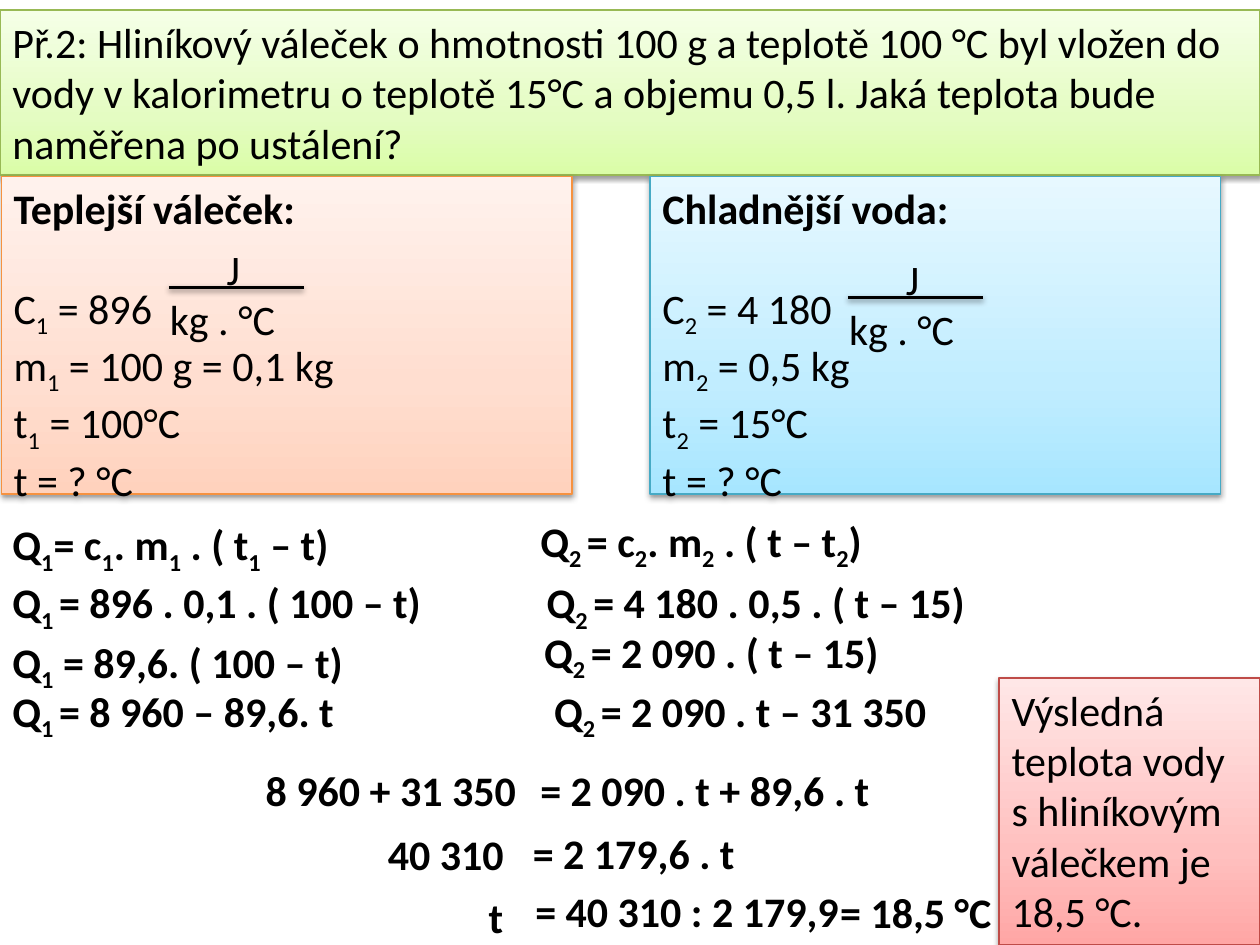
"""Build a worked calorimetry example: an aluminium cylinder placed in cooler water."""
from copy import deepcopy
from dataclasses import dataclass

from lxml import etree
from pptx import Presentation
from pptx import util as u
from pptx.dml.color import RGBColor
from pptx.enum import shapes, text
from pptx.oxml.ns import qn

EMU_PER_PX = 9144


@dataclass(frozen=True)
class Palette:
    stops: tuple[str, str, str]
    line: str


@dataclass(frozen=True)
class Theme:
    font: str = "Calibri"
    size: int = 24
    ink: str = "000000"
    green: Palette = Palette(("DAFDA7", "E4FCC2", "F5FFE7"), "98B955")
    orange: Palette = Palette(("FFD2BD", "FFDED0", "FFF2ED"), "F69240")
    blue: Palette = Palette(("A7E6FF", "C1EDFF", "E7F8FF"), "46AAC5")
    red: Palette = Palette(("FFA6A5", "FFC0BF", "FFE7E7"), "BF4C48")


@dataclass(frozen=True)
class Panel:
    x: int
    y: int
    w: int
    h: int
    palette: Palette
    lines: tuple[str, ...]
    heading: str = ""


@dataclass(frozen=True)
class Equation:
    x: int
    y: int
    w: int
    content: str


THEME = Theme()

PANELS = (
    Panel(0, 8, 1000, 131, THEME.green, (
        "Př.2: Hliníkový váleček o hmotnosti 100 g a teplotě 100 °C byl vložen do vody "
        "v kalorimetru o teplotě 15°C a objemu 0,5 l. Jaká teplota bude naměřena po ustálení?",)),
    Panel(1, 140, 453, 252, THEME.orange,
          ("C{1} = 896", "m{1} = 100 g = 0,1 kg", "t{1} = 100°C", "t = ? °C"),
          "Teplejší váleček:"),
    Panel(516, 140, 453, 252, THEME.blue,
          ("C{2} = 4 180", "m{2} = 0,5 kg", "t{2} = 15°C", "t = ? °C"),
          "Chladnější voda:"),
    Panel(793, 538, 207, 212, THEME.red,
          ("Výsledná teplota vody s hliníkovým válečkem je 18,5 °C.",)),
)

FRACTIONS = ((125, 187), (664, 195))

EQUATIONS = (
    Equation(0, 407, 352, "Q{1}= c{1}. m{1} . ( t{1} – t)"),
    Equation(419, 404, 320, "Q{2 }= c{2}. m{2} . ( t – t{2})"),
    Equation(0, 453, 414, "Q{1 }= 896 . 0,1 . ( 100 – t)"),
    Equation(424, 453, 405, "Q{2 }= 4 180 . 0,5 . ( t – 15)"),
    Equation(0, 500, 352, "Q{1} = 89,6. ( 100 – t)"),
    Equation(422, 492, 342, "Q{2 }= 2 090 . ( t – 15)"),
    Equation(0, 539, 328, "Q{1 }= 8 960 – 89,6. t"),
    Equation(430, 539, 360, "Q{2 }= 2 090 . t – 31 350"),
    Equation(201, 602, 226, "8 960 + 31 350"),
    Equation(419, 602, 360, "= 2 090 . t + 89,6 . t"),
    Equation(298, 653, 121, "40 310"),
    Equation(413, 652, 221, "= 2 179,6 . t"),
    Equation(378, 703, 35, "t"),
    Equation(415, 698, 266, "= 40 310 : 2 179,9"),
    Equation(657, 699, 141, "= 18,5 °C"),
)


def px(*values: int) -> list[u.Emu]:
    return [u.Emu(v * EMU_PER_PX) for v in values]


def write(p, content: str, *, bold: bool = False, before: int = 0) -> None:
    p.alignment = text.PP_ALIGN.LEFT
    p.space_before = u.Pt(before)
    for i, part in enumerate(content.replace("}", "{").split("{")):
        if not part:
            continue
        r = p.add_run()
        r.text = part
        r.font.name, r.font.size, r.font.bold = THEME.font, u.Pt(THEME.size), bold
        r.font.color.rgb = RGBColor.from_string(THEME.ink)
        if i % 2:
            r._r.get_or_add_rPr().set("baseline", "-25000")


def add_shadow(s) -> None:
    effects = etree.SubElement(s._element.spPr, qn("a:effectLst"))
    outer = etree.SubElement(effects, qn("a:outerShdw"), blurRad="40000", dist="20000",
                             dir="5400000", rotWithShape="0")
    color = etree.SubElement(outer, qn("a:srgbClr"), val=THEME.ink)
    etree.SubElement(color, qn("a:alpha"), val="38000")


def fill_gradient(s, palette: Palette) -> None:
    s.fill.gradient()
    s.fill.gradient_angle = 90
    stops = s._element.spPr.find(".//" + qn("a:gsLst"))
    stops.append(deepcopy(stops[-1]))
    for stop, place, color in zip(s.fill.gradient_stops, (0, 0.35, 1), palette.stops):
        stop.position = place
        stop.color.rgb = RGBColor.from_string(color)


def add_panel(parent, panel: Panel) -> None:
    s = parent.add_shape(shapes.MSO_SHAPE.RECTANGLE, *px(panel.x, panel.y, panel.w, panel.h))
    fill_gradient(s, panel.palette)
    s.line.color.rgb = RGBColor.from_string(panel.palette.line)
    s.line.width = u.Pt(0.75)
    add_shadow(s)
    tf = s.text_frame
    tf.word_wrap = True
    tf.vertical_anchor = text.MSO_ANCHOR.TOP
    if panel.heading:
        write(tf.paragraphs[0], panel.heading, bold=True)
    for i, line in enumerate(panel.lines):
        p = tf.add_paragraph() if i or panel.heading else tf.paragraphs[0]
        write(p, line, before=28 if panel.heading and i == 0 else 0)


def add_label(parent, x: int, y: int, w: int, h: int, content: str, *, bold: bool = False) -> None:
    tf = parent.add_textbox(*px(x, y, w, h)).text_frame
    tf.word_wrap = True
    tf.margin_right = 0
    write(tf.paragraphs[0], content, bold=bold)


def add_fraction(parent, x: int, y: int) -> None:
    group = parent.add_group_shape().shapes
    add_label(group, x + 45, y + 1, 45, 37, "J")
    add_label(group, x, y + 41, 125, 37, "kg . °C")
    bar = group.add_connector(shapes.MSO_CONNECTOR.STRAIGHT,
                              *px(x + 9, y + 41, x + 116, y + 41))
    bar.line.color.rgb = RGBColor.from_string(THEME.ink)
    bar.line.width = u.Pt(2)
    add_shadow(bar)


def main() -> None:
    prs = Presentation()
    prs.slide_width, prs.slide_height = px(1000, 750)
    sp = prs.slides.add_slide(prs.slide_layouts[6]).shapes
    for panel in PANELS:
        add_panel(sp, panel)
    for x, y in FRACTIONS:
        add_fraction(sp, x, y)
    for eq in EQUATIONS:
        add_label(sp, eq.x, eq.y, eq.w, 50, eq.content, bold=True)
    prs.save("out.pptx")


if __name__ == "__main__":
    main()
